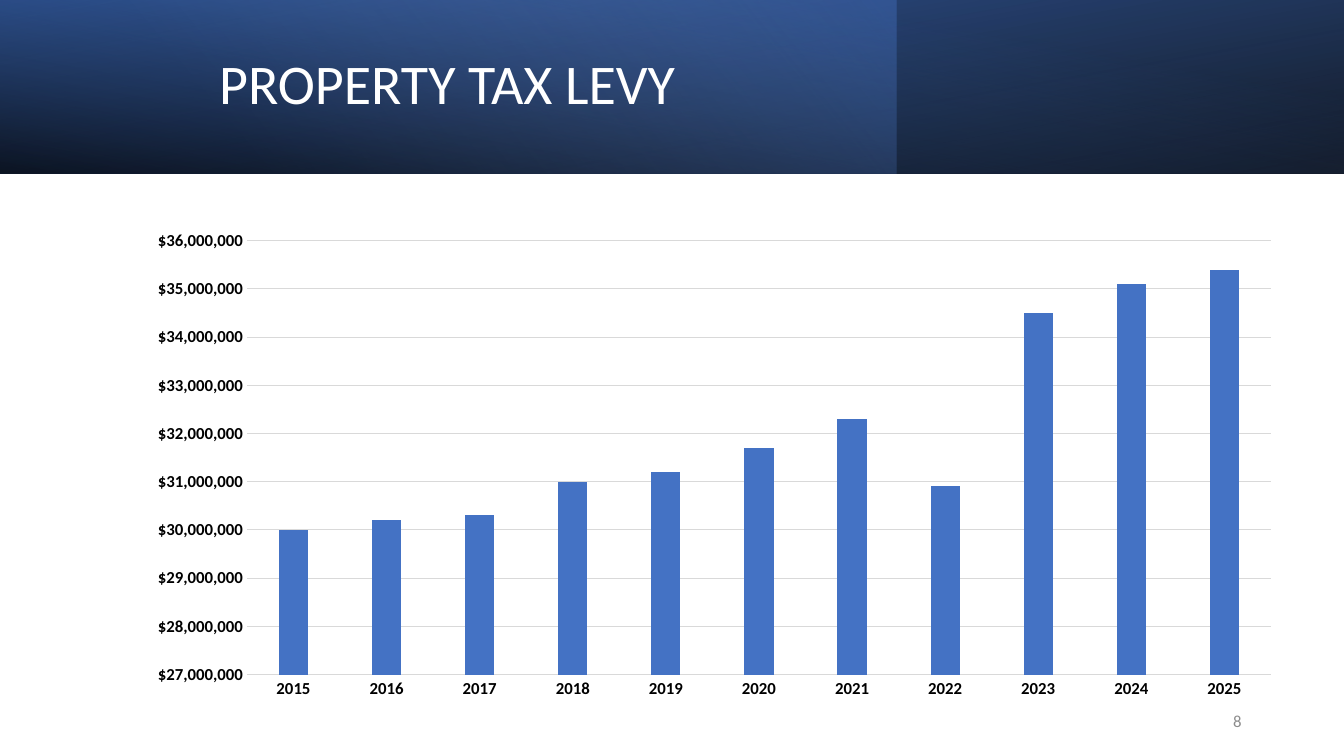
"""Build the property tax levy slide with a gradient banner and a column chart."""
from lxml.etree import SubElement
from pptx import Presentation
from pptx.chart.data import CategoryChartData
from pptx.dml.color import RGBColor
from pptx.enum.chart import XL_CHART_TYPE, XL_TICK_MARK
from pptx.enum.shapes import MSO_SHAPE
from pptx.enum.text import MSO_ANCHOR, MSO_AUTO_SIZE, PP_ALIGN
from pptx.oxml.ns import qn
from pptx.util import Cm, Pt

COLORS = {
    "black": "000000",
    "white": "FFFFFF",
    "blue": "4472C4",
    "deep": "2F5597",
    "pale": "8FAADC",
    "grid": "D9D9D9",
    "number": "8C8C8C",
}
FONT = "Calibri"
PAGE_WIDTH, PAGE_HEIGHT = Cm(33.87), Cm(19.05)
BANNER_HEIGHT = Cm(4.37)
FIRST_YEAR = 2015
LEVIES = [30000000, 30200000, 30300000, 31000000, 31200000, 31700000,
          32300000, 30900000, 34500000, 35100000, 35400000]


def color(name):
    return RGBColor.from_string(COLORS[name])


def style_font(font, size, name, bold=False):
    font.name = FONT
    font.size = Pt(size)
    font.bold = bold
    font.color.rgb = color(name)


def add_banner(page, width, angle, stops, flip=False, rotation=0):
    box = page.shapes.add_shape(MSO_SHAPE.RECTANGLE, 0, 0, width, BANNER_HEIGHT)
    box.shadow.inherit = False
    box.line.fill.background()
    box.rotation = rotation
    if flip:
        box._element.spPr.find(qn("a:xfrm")).set("flipH", "1")
    box.fill.gradient()
    box.fill.gradient_angle = 360 - angle
    for stop, (position, name, _) in zip(box.fill.gradient_stops, stops):
        stop.position = position
        stop.color.rgb = color(name)
    shades = box._element.spPr.iter(qn("a:srgbClr"))
    for shade, (_, _, opacity) in zip(list(shades), stops):
        SubElement(shade, qn("a:alpha")).set("val", str(opacity * 1000))


def add_title(page, text):
    title = page.shapes.title
    title.left, title.top = Cm(5.27), Cm(0.56)
    title.width, title.height = Cm(12.04), Cm(3.23)
    frame = title.text_frame
    frame.text = text
    frame.auto_size = MSO_AUTO_SIZE.NONE
    frame.vertical_anchor = MSO_ANCHOR.MIDDLE
    para = frame.paragraphs[0]
    para.alignment = PP_ALIGN.LEFT
    para.line_spacing = 0.9
    style_font(para.font, 40, "white")
    page.shapes._spTree.append(title._element)


def style_axis(axis):
    axis.major_tick_mark = XL_TICK_MARK.NONE
    axis.minor_tick_mark = XL_TICK_MARK.NONE
    style_font(axis.tick_labels.font, 12, "black", bold=True)


def place_plot(chart, **edges):
    area = chart._chartSpace.chart.plotArea
    layout = area.find(qn("c:layout"))
    if layout is None:
        layout = area.makeelement(qn("c:layout"))
        area.insert(0, layout)
    manual = SubElement(layout, qn("c:manualLayout"))
    settings = {"layoutTarget": "inner", "xMode": "edge", "yMode": "edge", **edges}
    for tag, value in settings.items():
        SubElement(manual, qn(f"c:{tag}")).set("val", str(value))


def add_levy_chart(page):
    data = CategoryChartData()
    data.categories = [str(FIRST_YEAR + step) for step in range(len(LEVIES))]
    data.add_series("Series 1", LEVIES)
    chart = page.shapes.add_chart(
        XL_CHART_TYPE.COLUMN_CLUSTERED, Cm(1.19), Cm(5.46), Cm(31.47), Cm(12.37), data
    ).chart
    chart.has_legend = False
    chart.has_title = False
    style_font(chart.font, 10, "black")
    place_plot(chart, x=0.16, y=0.049, w=0.82, h=0.884)

    plot = chart.plots[0]
    plot.vary_by_categories = False
    plot.gap_width = 219
    plot.overlap = -27
    fill = plot.series[0].format.fill
    fill.solid()
    fill.fore_color.rgb = color("blue")

    years, dollars = chart.category_axis, chart.value_axis
    style_axis(years)
    style_axis(dollars)
    dollars.minimum_scale = 27000000
    dollars.maximum_scale = 36000000
    dollars.major_unit = 1000000
    dollars.tick_labels.number_format = '"$"#,##0'
    dollars.tick_labels.number_format_is_linked = False
    dollars.format.line.fill.background()
    for line in (years.format.line, dollars.major_gridlines.format.line):
        line.color.rgb = color("grid")
        line.width = Pt(0.75)


def add_page_number(page, text):
    box = page.shapes.add_textbox(Cm(23.92), Cm(17.65), Cm(7.62), Cm(1.02))
    frame = box.text_frame
    frame.word_wrap = True
    frame.vertical_anchor = MSO_ANCHOR.MIDDLE
    frame.text = text
    para = frame.paragraphs[0]
    para.alignment = PP_ALIGN.RIGHT
    style_font(para.font, 12, "number")


def main():
    deck = Presentation()
    deck.slide_width, deck.slide_height = PAGE_WIDTH, PAGE_HEIGHT
    page = deck.slides.add_slide(deck.slide_layouts[5])
    add_banner(page, PAGE_WIDTH, 100, [(0, "black", 96), (1, "deep", 100)],
               flip=True, rotation=180)
    add_banner(page, Cm(22.58), 140, [(0, "blue", 41), (0.74, "pale", 0)])
    add_banner(page, PAGE_WIDTH, 260, [(0, "black", 63), (0.78, "blue", 15)], flip=True)
    add_title(page, "PROPERTY TAX LEVY")
    add_levy_chart(page)
    add_page_number(page, "8")
    deck.save("out.pptx")


if __name__ == "__main__":
    main()
